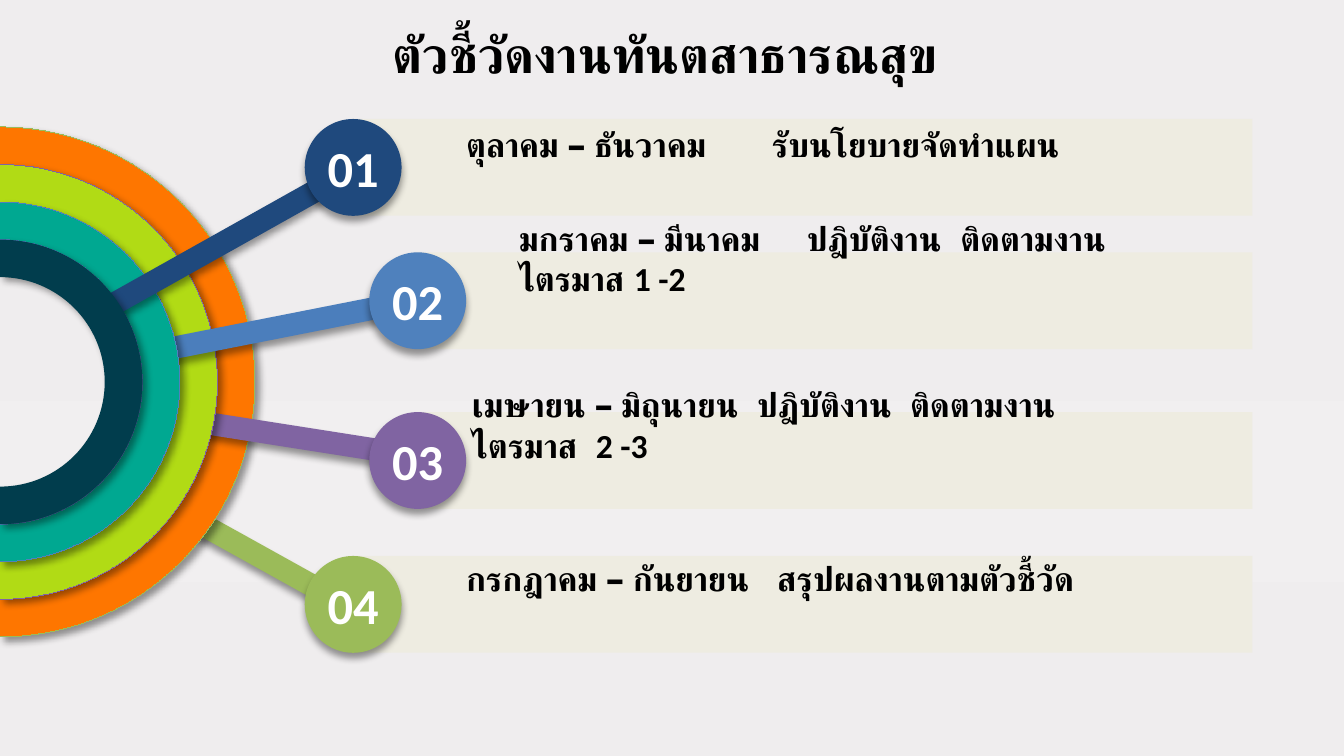
from lxml import etree
from pptx import Presentation
from pptx.dml.color import RGBColor
from pptx.enum import shapes, text
from pptx.oxml.ns import qn
from pptx.util import Cm, Pt

COLORS = {
    "black": "000000", "white": "FFFFFF", "bar": "EEECE1",
    "navy": "1F497D", "blue": "4F81BD", "steel": "4B7EBC",
    "purple": "8064A2", "green": "9BBB59",
    "orange": "FE7600", "lime": "B1DB15", "teal": "00A891", "deep": "013D4D",
}
BACKGROUND = [(0, "EFEDEE"), (53, "F1EFF0"), (77, "EFEDEE"), (100, "EFEBEC")]
BAR_RIGHT, DISC = 23.67, 1.83
KAPPA = 0.5523  # handle length of a quarter circle, as a share of its radius

# Each stage: number, disc position, disc and stalk colour, stalk ends
STAGES = [
    ("01", (5.76, 2.25), "navy", "navy", (1.75, 5.97, 6.6, 3.25)),
    ("02", (6.98, 4.77), "blue", "steel", (2.9, 6.65, 7.77, 5.69)),
    ("03", (6.98, 7.79), "purple", "purple", (3.4, 7.92, 7.8, 8.61)),
    ("04", (5.76, 10.51), "green", "green", (3.4, 9.68, 6.55, 11.43)),
]
# Each label: left, bottom, line count, tab stops, wording
LABELS = [
    (8.81, 3.24, 1, [5.78], "ตุลาคม – ธันวาคม\tรับนโยบายจัดทำแผน"),
    (9.81, 5.77, 2, [5.44, 8.34],
     "มกราคม – มีนาคม\tปฎิบัติงาน\tติดตามงานไตรมาส 1 -2"),
    (8.92, 8.92, 2, [2.34, 5.39, 8.28],
     "เมษายน – มิถุนายน\tปฎิบัติงาน\tติดตามงานไตรมาส\t2 -3"),
    (8.81, 11.43, 1, [5.88], "กรกฎาคม – กันยายน\tสรุปผลงานตามตัวชี้วัด"),
]
# Rings from inside to outside: fill, outline
RINGS = [("deep", None), ("teal", "blue"), ("lime", "purple"),
         ("orange", "green")]


def rgb(name):
    return RGBColor.from_string(COLORS[name])


def add_shadow(sp, angle):
    effects = etree.SubElement(sp._element.spPr, qn("a:effectLst"))
    shadow = etree.SubElement(
        effects, qn("a:outerShdw"), blurRad=str(Pt(4)), dist=str(Pt(3)),
        dir=str(angle * 60000), algn="ctr", rotWithShape="0")
    color = etree.SubElement(shadow, qn("a:srgbClr"), val=COLORS["black"])
    etree.SubElement(color, qn("a:alpha"), val="40000")


def write(tf, words, size, font, color, align, anchor, inset, tabs=()):
    tf.word_wrap = True
    tf.vertical_anchor = anchor
    tf.margin_left = tf.margin_right = Cm(inset[0])
    tf.margin_top = tf.margin_bottom = Cm(inset[1])
    p = tf.paragraphs[0]
    p.alignment = align
    if tabs:
        stops = etree.SubElement(p._p.get_or_add_pPr(), qn("a:tabLst"))
        for pos in tabs:
            etree.SubElement(stops, qn("a:tab"), pos=str(Cm(pos)), algn="l")
    r = p.add_run()
    r.text = words
    r.font.size, r.font.name, r.font.bold = Pt(size), font, True
    r.font.color.rgb = rgb(color)


def paint_background(s):
    fill = s.background.fill
    fill.gradient()
    fill.gradient_angle = 270
    stops = s.element.find(".//" + qn("a:gsLst"))
    for old in list(stops):
        stops.remove(old)
    for pos, color in BACKGROUND:
        stop = etree.SubElement(stops, qn("a:gs"), pos=str(pos * 1000))
        etree.SubElement(stop, qn("a:srgbClr"), val=color)


def add_title(s, x, y, w, h):
    sp = s.shapes.add_textbox(Cm(x), Cm(y), Cm(w), Cm(h))
    write(sp.text_frame, "ตัวชี้วัดงานทันตสาธารณสุข", 27, "Arial", "black",
          text.PP_ALIGN.CENTER, text.MSO_ANCHOR.TOP, (0.18, 0.1))


def add_bar(s, x, y, w, h):
    sp = s.shapes.add_shape(shapes.MSO_SHAPE.RECTANGLE,
                            Cm(x), Cm(y), Cm(w), Cm(h))
    sp.shadow.inherit = False
    sp.fill.solid()
    sp.fill.fore_color.rgb = rgb("bar")
    sp.line.fill.background()


def add_label(s, x, bottom, lines, tabs, words):
    h = 0.26 + 0.76 * lines
    sp = s.shapes.add_textbox(Cm(x), Cm(bottom - h), Cm(12.45), Cm(h))
    write(sp.text_frame, words, 18, "Calibri", "black", text.PP_ALIGN.LEFT,
          text.MSO_ANCHOR.BOTTOM, (0, 0.13), tabs)


def add_stage(s, number, position, disc_color, stalk_color, ends):
    # Stalk
    line = s.shapes.add_connector(shapes.MSO_CONNECTOR.STRAIGHT,
                                  *[Cm(v) for v in ends])
    line.line.width = Pt(12)
    line.line.color.rgb = rgb(stalk_color)
    add_shadow(line, 90)
    # Numbered disc
    x, y = position
    sp = s.shapes.add_shape(shapes.MSO_SHAPE.OVAL,
                            Cm(x), Cm(y), Cm(DISC), Cm(DISC))
    sp.fill.solid()
    sp.fill.fore_color.rgb = rgb(disc_color)
    sp.line.fill.background()
    add_shadow(sp, 90)
    write(sp.text_frame, number, 27, "Calibri", "white",
          text.PP_ALIGN.CENTER, text.MSO_ANCHOR.MIDDLE, (0, 0.1))


def curve(segment, points):
    """Turn a straight outline segment into a Bezier curve."""
    bezier = etree.Element(qn("a:cubicBezTo"))
    for x, y in points:
        etree.SubElement(bezier, qn("a:pt"), x=str(Cm(x)), y=str(Cm(y)))
    segment.getparent().replace(segment, bezier)


def add_half_ring(s, cy, inner, thickness, fill, outline):
    outer = inner + thickness
    corners = [(0, -outer), (outer, 0), (0, outer),
               (0, inner), (inner, 0), (0, -inner)]
    points = [(Cm(x), Cm(cy + y)) for x, y in corners]
    builder = s.shapes.build_freeform(*points[0])
    builder.add_line_segments(points[1:], close=True)
    sp = builder.convert_to_shape()
    # Quarter arcs: down the outer edge, then back up the inner edge
    segments = list(sp._element.iter(qn("a:lnTo")))
    for first, radius, turn in ((0, outer, 1), (3, inner, -1)):
        k, end = radius * KAPPA, radius * turn
        curve(segments[first], [(k, outer - end), (radius, outer - k * turn),
                                (radius, outer)])
        curve(segments[first + 1], [(radius, outer + k * turn),
                                    (k, outer + end), (0, outer + end)])
    sp.fill.solid()
    sp.fill.fore_color.rgb = rgb(fill)
    if outline:
        sp.line.color.rgb = rgb(outline)
        sp._element.spPr.find(qn("a:ln")).set("w", "0")  # hairline
    else:
        sp.line.fill.background()
    add_shadow(sp, 45)


def main():
    prs = Presentation()
    prs.slide_width, prs.slide_height = Cm(25.4), Cm(14.29)
    s = prs.slides.add_slide(prs.slide_layouts[6])
    paint_background(s)

    for _, (x, y), *_ in STAGES:
        add_bar(s, x + 0.88, y, BAR_RIGHT - x - 0.88, DISC)
    add_title(s, 1.62, 0.33, 21.9, 1.55)
    for label in LABELS:
        add_label(s, *label)

    # Outer ring first, so that each stalk rises from under its own ring
    for i in reversed(range(len(STAGES))):
        add_stage(s, *STAGES[i])
        add_half_ring(s, 7.22, 1.98 + 0.71 * i, 0.71, *RINGS[i])

    prs.save("out.pptx")


if __name__ == "__main__":
    main()
